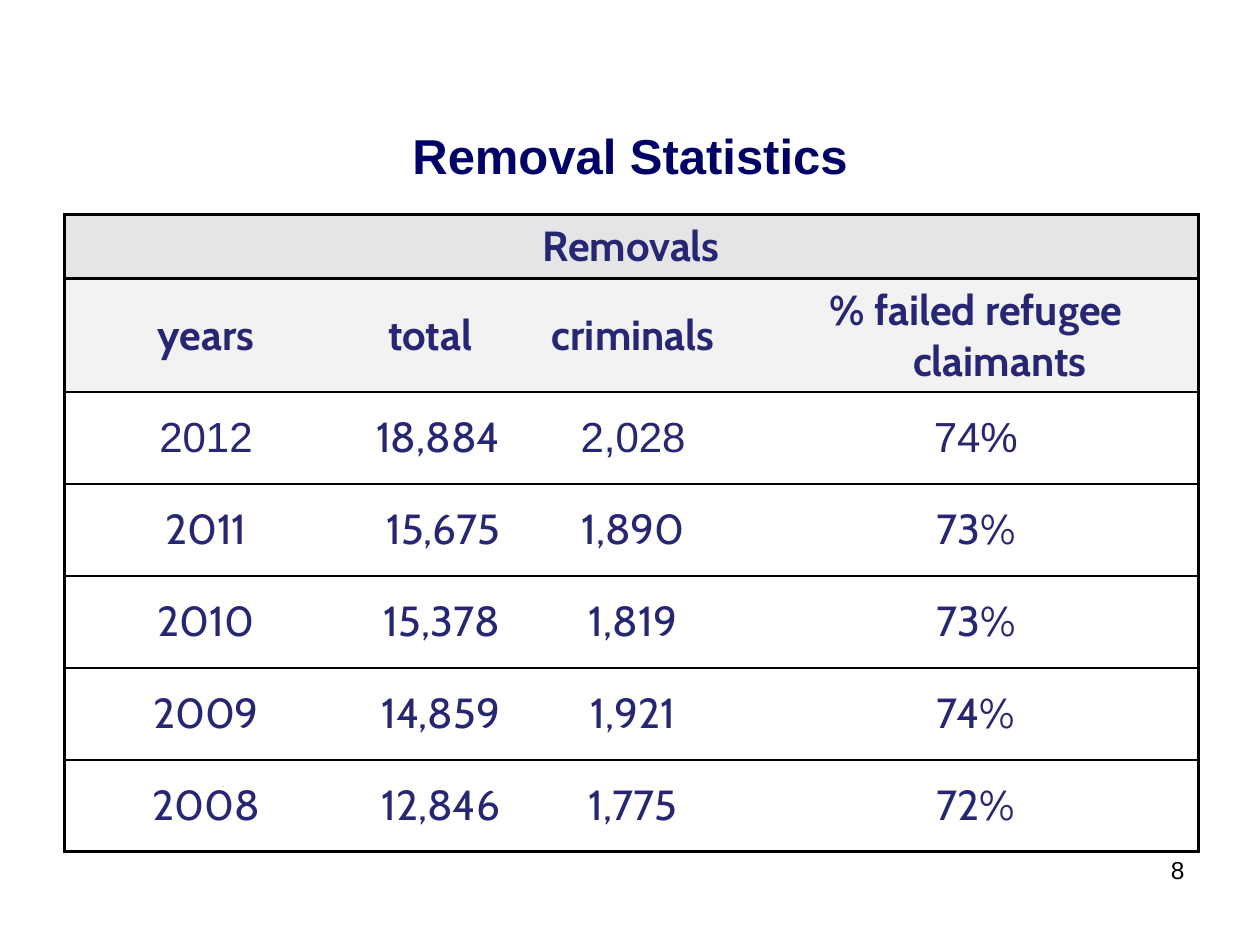
from dataclasses import dataclass

from lxml import etree
from pptx import Presentation
from pptx.dml.color import RGBColor
from pptx.enum.text import MSO_ANCHOR, PP_ALIGN
from pptx.oxml.ns import qn
from pptx.util import Inches, Pt

CENTER, RIGHT = PP_ALIGN.CENTER, PP_ALIGN.RIGHT
TOP, MIDDLE = MSO_ANCHOR.TOP, MSO_ANCHOR.MIDDLE


@dataclass(frozen=True)
class Theme:
    title: str = "000066"
    body: str = "262673"
    ink: str = "000000"
    banner: str = "E5E5E5"
    header: str = "F2F2F2"
    plain_font: str = "Arial"
    table_font: str = "Cabin"
    title_size: int = 28
    table_size: int = 24
    number_size: int = 14
    frame_line: int = 2
    row_line: int = 1


THEME = Theme()
COLUMN_WIDTHS = (2.25, 1.31, 1.91, 3.53)
BANNER_HEIGHT, HEADER_HEIGHT, YEAR_HEIGHT = 0.51, 0.9, 0.73
HANGING_INDENT = 0.38
HEADINGS = ("years", "total", "criminals", "% failed refugee claimants")
REMOVALS = (
    ("2012", "18,884", "2,028", "74%"),
    ("2011", "15,675", "1,890", "73%"),
    ("2010", "15,378", "1,819", "73%"),
    ("2009", "14,859", "1,921", "74%"),
    ("2008", "12,846", "1,775", "72%"),
)


def write(frame, text, size, font, color, align, bold=False):
    paragraph = frame.paragraphs[0]
    paragraph.alignment = align
    run = paragraph.add_run()
    run.text = text
    run.font.size = Pt(size)
    run.font.name = font
    run.font.bold = bold
    run.font.color.rgb = RGBColor.from_string(color)
    return paragraph


def add_label(slide, left, top, width, height, anchor, *style, bold=False):
    box = slide.shapes.add_textbox(*map(Inches, (left, top, width, height)))
    box.text_frame.word_wrap = True
    box.text_frame.vertical_anchor = anchor
    write(box.text_frame, *style, bold=bold)


def draw_borders(cell, left, right, top, bottom):
    properties = cell._tc.get_or_add_tcPr()
    sides = zip(("a:lnL", "a:lnR", "a:lnT", "a:lnB"), (left, right, top, bottom))
    for position, (side, width) in enumerate(sides):
        line = etree.Element(qn(side), w=str(Pt(width)))
        if width:
            fill = etree.SubElement(line, qn("a:solidFill"))
            etree.SubElement(fill, qn("a:srgbClr"), val=THEME.ink)
        else:
            etree.SubElement(line, qn("a:noFill"))
        properties.insert(position, line)


def fill_cell(cell, text, font, align=CENTER, bold=False, shade=None):
    cell.vertical_anchor = MIDDLE
    if shade:
        cell.fill.solid()
        cell.fill.fore_color.rgb = RGBColor.from_string(shade)
    else:
        cell.fill.background()
    if text:
        paragraph = write(cell.text_frame, text, THEME.table_size, font, THEME.body, align, bold)
        indent = Inches(HANGING_INDENT)
        paragraph._p.get_or_add_pPr().set("marL", str(indent))
        paragraph._p.get_or_add_pPr().set("indent", str(-indent))


def row_borders(row, column, last_row, last_column):
    frame, rule = THEME.frame_line, THEME.row_line
    return (
        frame if column == 0 else 0,
        frame if column == last_column else 0,
        frame if row <= 1 else rule,
        frame if row in (0, last_row) else rule,
    )


def add_removals(slide, left, top):
    heights = [BANNER_HEIGHT, HEADER_HEIGHT] + [YEAR_HEIGHT] * len(REMOVALS)
    area = map(Inches, (left, top, sum(COLUMN_WIDTHS), sum(heights)))
    table = slide.shapes.add_table(len(heights), len(COLUMN_WIDTHS), *area).table
    table.first_row = table.horz_banding = False
    for column, width in zip(table.columns, COLUMN_WIDTHS):
        column.width = Inches(width)
    for row, height in zip(table.rows, heights):
        row.height = Inches(height)

    banner = ("Removals", "", "", "")
    last_row, last_column = len(heights) - 1, len(COLUMN_WIDTHS) - 1
    for r, texts in enumerate((banner, HEADINGS, *REMOVALS)):
        for c, text in enumerate(texts):
            cell = table.cell(r, c)
            if r < 2:
                shade = THEME.header if r else THEME.banner
                fill_cell(cell, text, THEME.table_font, bold=True, shade=shade)
            else:
                latest_year = r == 2 and c != 1
                font = THEME.plain_font if latest_year else THEME.table_font
                fill_cell(cell, text, font, RIGHT if c == 1 else CENTER)
            draw_borders(cell, *row_borders(r, c, last_row, last_column))
    table.cell(0, 0).merge(table.cell(0, last_column))
    draw_frame_end = table.cell(0, 0)._tc.tcPr.find(qn("a:lnR"))
    draw_frame_end.getparent().replace(
        draw_frame_end, table.cell(0, last_column)._tc.tcPr.find(qn("a:lnR"))
    )


def main():
    deck = Presentation()
    deck.slide_width, deck.slide_height = Inches(10), Inches(7.5)
    slide = deck.slides.add_slide(deck.slide_layouts[6])
    add_label(slide, 0.5, 0.91, 9, 0.64, MIDDLE, "Removal Statistics",
              THEME.title_size, THEME.plain_font, THEME.title, CENTER, bold=True)
    add_removals(slide, 0.51, 1.7)
    add_label(slide, 7.17, 6.74, 2.33, 0.52, TOP, "8",
              THEME.number_size, THEME.plain_font, THEME.ink, RIGHT)
    deck.save("out.pptx")


if __name__ == "__main__":
    main()
